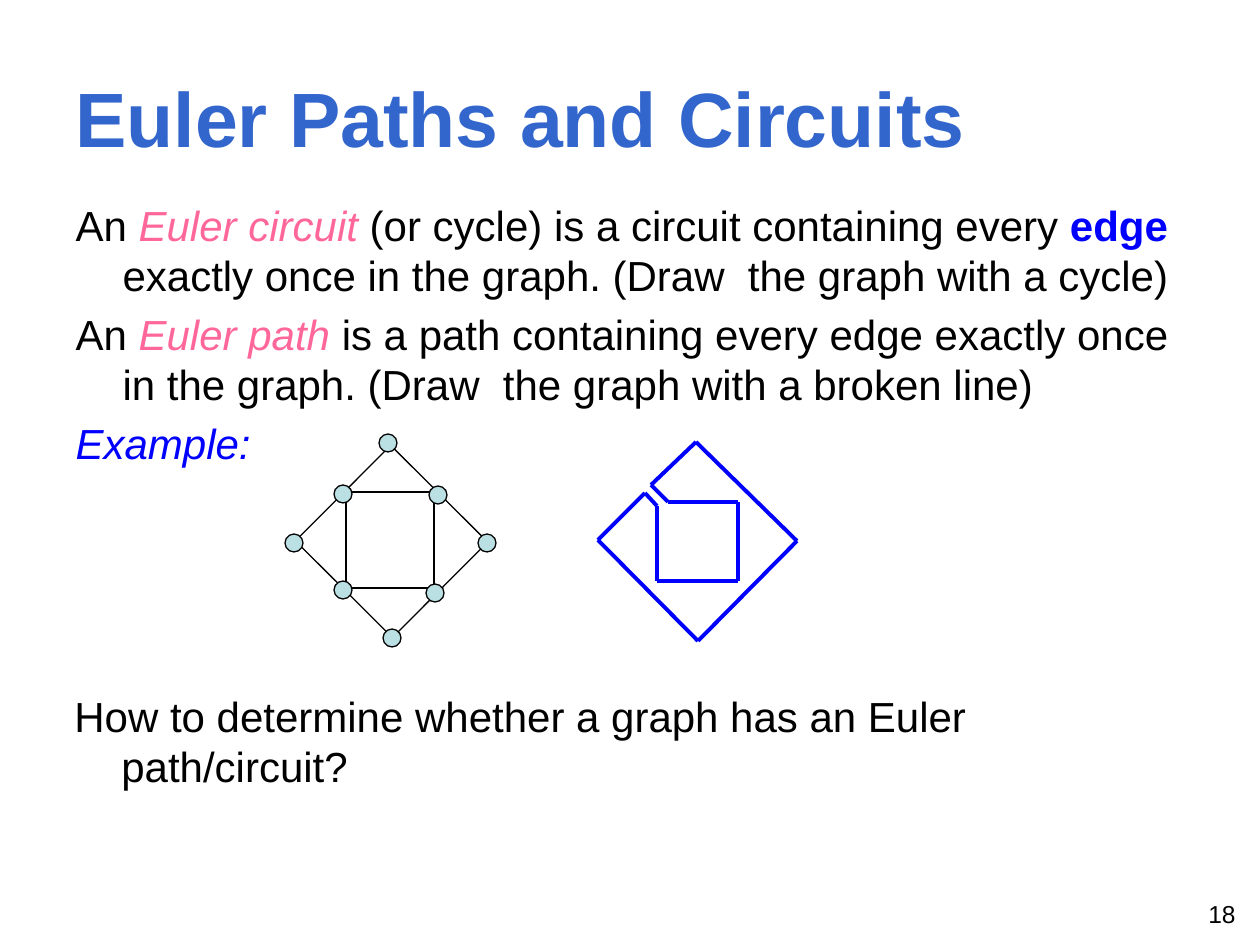
from itertools import pairwise

from lxml.etree import SubElement
from pptx import Presentation
from pptx.dml.color import RGBColor
from pptx.enum.shapes import MSO_CONNECTOR, MSO_SHAPE
from pptx.enum.text import MSO_ANCHOR, MSO_AUTO_SIZE, PP_ALIGN
from pptx.oxml.ns import qn
from pptx.util import Pt

SCALE = 914400 / 126
BLACK = RGBColor(0x00, 0x00, 0x00)
BLUE = RGBColor(0x00, 0x00, 0xFF)
PINK = RGBColor(0xFF, 0x66, 0x99)
HEAD = RGBColor(0x33, 0x66, 0xCC)
TEAL = RGBColor(0xBB, 0xE0, 0xE3)

PLAIN = (BLACK, False, False)
TERM = (PINK, False, True)
BOLD = (BLUE, True, False)
LABEL = (BLUE, False, True)

BODY = [
    [("An ", PLAIN), ("Euler circuit", TERM),
     (" (or cycle) is a circuit containing every ", PLAIN), ("edge", BOLD),
     (" exactly once in the graph. (Draw  the graph with a cycle)", PLAIN)],
    [("An ", PLAIN), ("Euler path", TERM),
     (" is a path containing every edge exactly once in the graph. "
      "(Draw  the graph with a broken line)", PLAIN)],
    [("Example:", LABEL)],
]
QUERY = [[("How to determine whether a graph has an Euler path/circuit?", PLAIN)]]

NODES = [(438, 495), (388, 443), (343, 494), (294, 543),
         (343, 590), (392, 638), (435, 593), (487, 543)]
NODE_SIZE = 18
TOUR = [(651, 485), (696, 442), (797, 541), (698, 641), (598, 540), (645, 493),
        (657, 506), (657, 581), (738, 581), (738, 502), (668, 502)]


def px(*nums):
    """Turn px lengths into a list of EMU."""
    return [round(num * SCALE) for num in nums]


def place(shape, *box):
    shape.left, shape.top, shape.width, shape.height = px(*box)


def style(run, size, color, bold=False, italic=False):
    font = run.font
    font.name, font.size = "Arial", Pt(size)
    font.bold, font.italic = bold, italic
    font.color.rgb = color


def set_title(shape, text):
    place(shape, 63, 38, 1134, 158)
    frame = shape.text_frame
    frame.text = text
    frame.auto_size = MSO_AUTO_SIZE.NONE
    frame.vertical_anchor = MSO_ANCHOR.MIDDLE
    para = frame.paragraphs[0]
    para.alignment = PP_ALIGN.LEFT
    style(para.runs[0], 44, HEAD, bold=True)


def set_paras(shape, paras):
    """Fill a shape with hanging paragraphs of (text, look) parts."""
    frame = shape.text_frame
    frame.word_wrap = True
    frame.auto_size = MSO_AUTO_SIZE.NONE
    for num, parts in enumerate(paras):
        para = frame.add_paragraph() if num else frame.paragraphs[0]
        para.space_before = Pt(4.8)
        para.line_spacing = Pt(28.8)
        props = para._p.get_or_add_pPr()
        indent = px(47)[0]
        props.set("marL", str(indent))
        props.set("indent", str(-indent))
        SubElement(props, qn("a:buNone"))
        for text, look in parts:
            run = para.add_run()
            run.text = text
            style(run, 24, *look)


def add_form(group, kind, box, fill=None):
    form = group.shapes.add_shape(kind, *px(*box))
    form.shadow.inherit = False
    form.line.color.rgb = BLACK
    form.line.width = Pt(0.75)
    if fill is None:
        form.fill.background()
    else:
        form.fill.solid()
        form.fill.fore_color.rgb = fill
    return form


def add_graph(slide):
    group = slide.shapes.add_group_shape()
    add_form(group, MSO_SHAPE.RECTANGLE, (346, 492, 88, 96))
    outer = add_form(group, MSO_SHAPE.RECTANGLE, (323, 474, 137, 135))
    outer.rotation = 44.9
    half = NODE_SIZE / 2
    for x, y in NODES:
        add_form(group, MSO_SHAPE.OVAL,
                 (x - half, y - half, NODE_SIZE, NODE_SIZE), TEAL)


def add_tour(slide):
    """Draw the closed tour as one line for each edge."""
    group = slide.shapes.add_group_shape()
    for start, end in pairwise(TOUR + TOUR[:1]):
        line = group.shapes.add_connector(MSO_CONNECTOR.STRAIGHT, *px(*start, *end))
        line.line.color.rgb = BLUE
        line.line.width = Pt(2.25)
        SubElement(line._element.spPr, qn("a:effectLst"))


def add_number(slide, text):
    frame = slide.shapes.add_textbox(*px(954, 893, 294, 39)).text_frame
    frame.word_wrap = True
    frame.text = text
    para = frame.paragraphs[0]
    para.alignment = PP_ALIGN.RIGHT
    style(para.runs[0], 14, BLACK)


def main():
    deck = Presentation()
    deck.slide_width, deck.slide_height = px(1260, 945)
    slide = deck.slides.add_slide(deck.slide_layouts[1])
    set_title(slide.shapes.title, "Euler Paths and Circuits")
    body = slide.placeholders[1]
    place(body, 63, 193, 1134, 296)
    set_paras(body, BODY)
    add_graph(slide)
    add_tour(slide)
    set_paras(slide.shapes.add_textbox(*px(62, 684, 1134, 197)), QUERY)
    add_number(slide, "18")
    deck.save("out.pptx")


if __name__ == "__main__":
    main()
